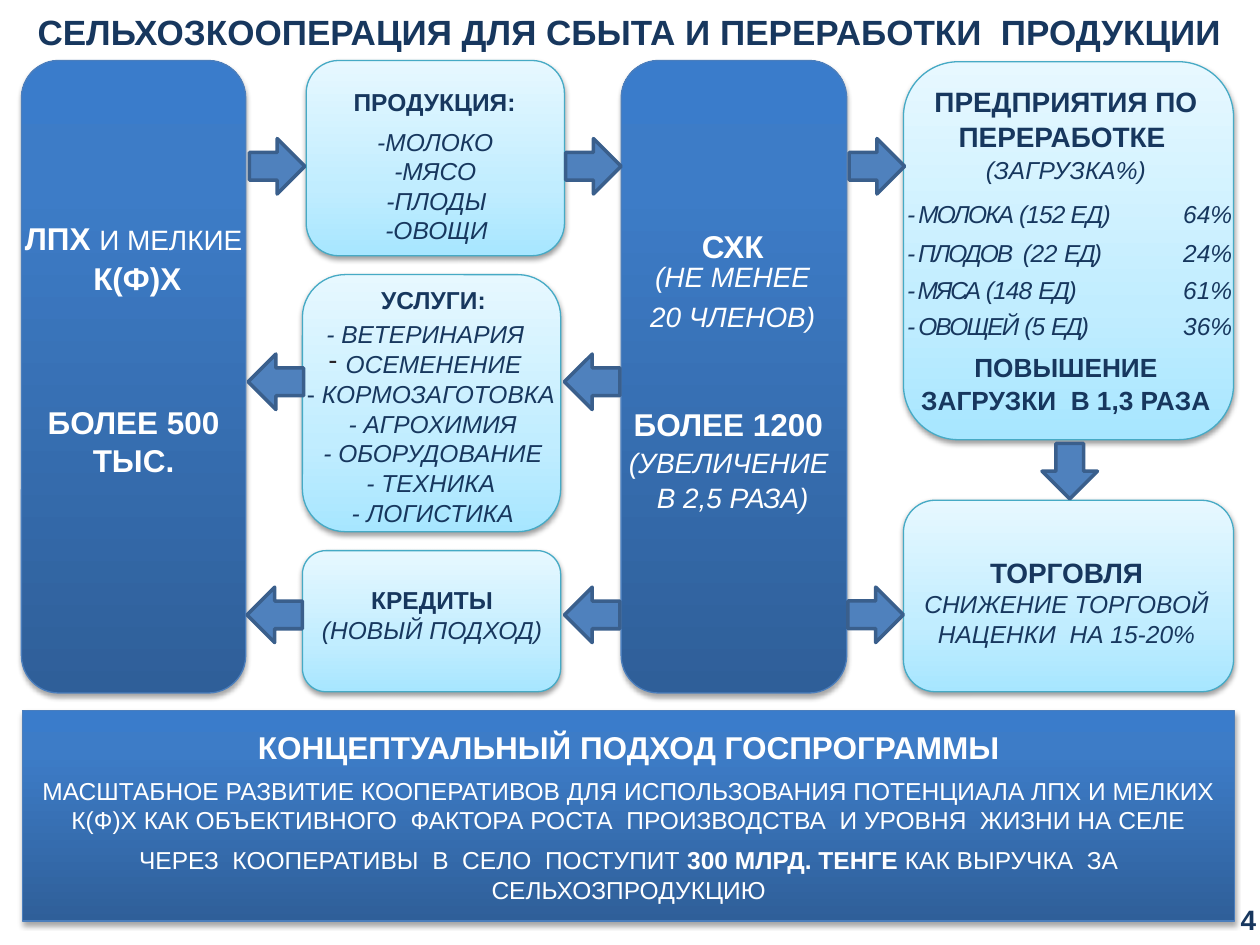
from copy import deepcopy

from lxml import etree
from pptx import Presentation
from pptx import util as u
from pptx.dml.color import RGBColor
from pptx.enum import shapes, text
from pptx.oxml.ns import qn

NAVY = RGBColor(0x17, 0x37, 0x5E)
WHITE = RGBColor(0xFF, 0xFF, 0xFF)
ARROW_FILL = RGBColor(0x4F, 0x81, 0xBD)
ARROW_LINE = RGBColor(0x3A, 0x5F, 0x8C)
BLUE_LINE = RGBColor(0x4B, 0x7E, 0xBC)
ICE_LINE = RGBColor(0x46, 0xAA, 0xC5)
BLUE_STOPS = [(0, RGBColor(0x2F, 0x5F, 0x99)), (0.8, RGBColor(0x3D, 0x7C, 0xC7)),
              (1, RGBColor(0x3A, 0x7C, 0xCB))]
ICE_STOPS = [(0, RGBColor(0xA7, 0xE6, 0xFF)), (0.35, RGBColor(0xC1, 0xED, 0xFF)),
             (1, RGBColor(0xE7, 0xF8, 0xFF))]
BLUE = (BLUE_STOPS, BLUE_LINE, 35, 1.8)
ICE = (ICE_STOPS, ICE_LINE, 38, 1.6)
BULLET_COLOR = "2A2428"
NO_GRID_STYLE = "{2D5ABB26-0587-4C30-8999-92F81FD0307C}"

ROUND = shapes.MSO_SHAPE.ROUNDED_RECTANGLE
CENTER, LEFT, RIGHT = text.PP_ALIGN.CENTER, text.PP_ALIGN.LEFT, text.PP_ALIGN.RIGHT
MIDDLE = text.MSO_ANCHOR.MIDDLE


def inches(*lengths):
    return [u.Inches(length) for length in lengths]


def write(paragraph, words, size=14, color=NAVY, bold=False, italic=False, spacing=0):
    run = paragraph.add_run()
    run.text = words
    font = run.font
    font.name, font.size = "Arial", u.Pt(size)
    font.bold, font.italic = bold, italic
    font.color.rgb = color
    if spacing:
        font._element.set("spc", str(round(spacing * 100)))


def add_paragraph(frame, *runs, align=CENTER, before=0, after=0, line=None,
                  margin=0, indent=0, bullet=None):
    paragraph = frame.paragraphs[0]
    if paragraph.runs:
        paragraph = frame.add_paragraph()
    paragraph.alignment = align
    paragraph.space_before, paragraph.space_after = u.Pt(before), u.Pt(after)
    if line:
        paragraph.line_spacing = line
    properties = paragraph._p.get_or_add_pPr()
    properties.set("marL", str(u.Inches(margin)))
    properties.set("indent", str(u.Inches(indent)))
    if bullet:
        color = etree.SubElement(properties, qn("a:buClr"))
        etree.SubElement(color, qn("a:srgbClr"), val=BULLET_COLOR)
        etree.SubElement(properties, qn("a:buChar"), char=bullet)
    for words, style in runs:
        write(paragraph, words, **style)


def clear_insets(frame):
    frame.margin_left = frame.margin_right = frame.margin_top = frame.margin_bottom = 0


def add_label(slide, place, anchor=None):
    frame = slide.shapes.add_textbox(*inches(*place)).text_frame
    frame.word_wrap = True
    clear_insets(frame)
    if anchor:
        frame.vertical_anchor = anchor
    return frame


def add_panel(slide, place, look, outline=ROUND):
    stops, line_color, shadow_alpha, shadow_distance = look
    panel = slide.shapes.add_shape(outline, *inches(*place))
    panel.fill.gradient()
    panel.fill.gradient_angle = 90
    stop_list = panel._element.spPr.find(".//" + qn("a:gsLst"))
    stop_list.append(deepcopy(stop_list[-1]))
    for stop, (position, color) in zip(panel.fill.gradient_stops, stops):
        stop.position = position
        stop.color.rgb = color
    panel.line.color.rgb = line_color
    panel.line.width = u.Pt(0.75)
    panel.shadow.inherit = False
    effects = panel._element.spPr.find(qn("a:effectLst"))
    shadow = etree.SubElement(effects, qn("a:outerShdw"), blurRad=str(u.Pt(3.1)),
                              dist=str(u.Pt(shadow_distance)), dir="5400000",
                              rotWithShape="0")
    color = etree.SubElement(shadow, qn("a:srgbClr"), val="000000")
    etree.SubElement(color, qn("a:alpha"), val=str(shadow_alpha * 1000))
    return panel


def add_arrow(slide, left, top, rotation):
    arrow = slide.shapes.add_shape(shapes.MSO_SHAPE.RIGHT_ARROW,
                                   *inches(left, top, 0.44, 0.44))
    arrow.rotation = rotation
    arrow.fill.solid()
    arrow.fill.fore_color.rgb = ARROW_FILL
    arrow.line.color.rgb = ARROW_LINE
    arrow.line.width = u.Pt(2)
    arrow.shadow.inherit = False


def add_load_table(slide, rows):
    frame = slide.shapes.add_table(len(rows), 2, *inches(7.17, 1.64, 2.62, 1.1))
    table = frame.table
    table.first_row = table.horz_banding = False
    table._tbl.tblPr.find(qn("a:tableStyleId")).text = NO_GRID_STYLE
    for column, width in zip(table.columns, inches(1.83, 0.78)):
        column.width = width
    for row, height in zip(table.rows, inches(0.24, 0.29, 0.29, 0.28)):
        row.height = height
    for index, (product, share) in enumerate(rows):
        spacing = dict(before=2) if index else dict(line=u.Pt(12.7))
        product_runs = [(words, dict(italic=True, spacing=gap)) for words, gap in product]
        share_runs = [(share, dict(italic=True))]
        for column, (runs, align) in enumerate([(product_runs, LEFT), (share_runs, RIGHT)]):
            cell = table.cell(index, column)
            cell.fill.background()
            clear_insets(cell)
            cell.margin_top = u.Inches(0.03 if index else 0)
            add_paragraph(cell.text_frame, *runs, align=align,
                          margin=0.03 if align == LEFT else 0, **spacing)


def add_concept(slide):
    bar = add_panel(slide, (0.18, 5.64, 9.62, 1.67), BLUE, shapes.MSO_SHAPE.RECTANGLE)
    frame = bar.text_frame
    frame.word_wrap = True
    frame.vertical_anchor = MIDDLE
    plain, strong = dict(color=WHITE), dict(color=WHITE, bold=True)
    add_paragraph(frame, ("КОНЦЕПТУАЛЬНЫЙ ПОДХОД ГОСПРОГРАММЫ", dict(strong, size=18)), after=6)
    add_paragraph(frame, ("МАСШТАБНОЕ РАЗВИТИЕ КООПЕРАТИВОВ ДЛЯ ИСПОЛЬЗОВАНИЯ ПОТЕНЦИАЛА ЛПХ "
                          "И МЕЛКИХ К(Ф)Х КАК ОБЪЕКТИВНОГО  ФАКТОРА РОСТА  ПРОИЗВОДСТВА  "
                          "И УРОВНЯ  ЖИЗНИ НА СЕЛЕ", plain), after=6)
    add_paragraph(frame, ("ЧЕРЕЗ  КООПЕРАТИВЫ  В  СЕЛО  ПОСТУПИТ ", plain),
                  ("300 МЛРД. ТЕНГЕ", strong), (" КАК ВЫРУЧКА  ЗА СЕЛЬХОЗПРОДУКЦИЮ", plain))


def add_pillar_texts(slide):
    strong = dict(size=18, color=WHITE, bold=True)
    plain = dict(size=16, color=WHITE)
    slanted = dict(plain, italic=True)
    farms = add_label(slide, (0.17, 1.74, 1.78, 0.62))
    add_paragraph(farms, ("ЛПХ ", strong), ("И МЕЛКИЕ", plain))
    add_paragraph(farms, ("К(Ф)Х", strong), before=0.9, margin=0.06)
    add_paragraph(add_label(slide, (0.17, 3.2, 1.78, 0.61)), ("БОЛЕЕ 500 ТЫС.", strong))
    cooperatives = add_label(slide, (4.92, 1.73, 1.79, 0.96))
    add_paragraph(cooperatives, ("СХК", strong), line=u.Pt(26.6))
    add_paragraph(cooperatives, ("(НЕ МЕНЕЕ", slanted), line=u.Pt(16.4))
    add_paragraph(cooperatives, ("20 ЧЛЕНОВ)", slanted), before=3.6)
    add_paragraph(add_label(slide, (4.92, 3.2, 1.79, 0.89)), ("БОЛЕЕ 1200  ", strong),
                  ("(УВЕЛИЧЕНИЕ  В 2,5 РАЗА)", slanted), line=1.06)


def add_exchange_texts(slide):
    strong, slanted = dict(bold=True), dict(italic=True)
    produce = add_label(slide, (2.42, 0.69, 2.06, 1.26))
    add_paragraph(produce, ("ПРОДУКЦИЯ:", strong), after=6)
    for item, margin in [("-МОЛОКО", 0.01), ("-МЯСО", 0.01), ("-ПЛОДЫ", 0.03), ("-ОВОЩИ", 0.03)]:
        add_paragraph(produce, (item, slanted), margin=margin)
    services = add_label(slide, (2.4, 2.26, 2.04, 1.93))
    add_paragraph(services, ("УСЛУГИ:", strong), line=u.Pt(16.8), after=6, margin=0.04)
    add_paragraph(services, ("- ВЕТЕРИНАРИЯ", slanted), align=LEFT, line=u.Pt(13.8), margin=0.19)
    add_paragraph(services, (" ОСЕМЕНЕНИЕ", slanted), align=LEFT, margin=0.29,
                  indent=-0.08, bullet="-")
    add_paragraph(services, ("- ", {}), ("КОРМОЗАГОТОВКА", slanted), before=0.3)
    for item, margin in [("- АГРОХИМИЯ", 0.03), ("- ОБОРУДОВАНИЕ", 0.03),
                         ("- ТЕХНИКА", 0), ("- ЛОГИСТИКА", 0.03)]:
        add_paragraph(services, (item, slanted), before=0.2, margin=margin)
    credit = add_label(slide, (2.4, 4.64, 2.06, 0.49))
    add_paragraph(credit, ("КРЕДИТЫ", strong))
    add_paragraph(credit, ("(НОВЫЙ ПОДХОД)", slanted), before=0.8)


def add_market_texts(slide):
    strong, slanted = dict(size=16, bold=True), dict(italic=True)
    add_paragraph(add_label(slide, (7.26, 0.66, 2.4, 0.81)),
                  ("ПРЕДПРИЯТИЯ ПО ПЕРЕРАБОТКЕ  ", strong), ("(ЗАГРУЗКА%)", slanted), line=1.05)
    add_load_table(slide, [
        ([("- МОЛОКА ", -1.1), ("(152 ЕД)", -0.5)], "64%"),
        ([("- ПЛОДОВ  ", -1.2), ("(22 ", -0.2), ("ЕД)", -1.1)], "24%"),
        ([("- МЯСА ", -1.3), ("(148 ", -0.5), ("ЕД)", -1)], "61%"),
        ([("- ОВОЩЕЙ ", -1.1), ("(5 ", -0.5), ("ЕД)", -1.1)], "36%")])
    add_paragraph(add_label(slide, (7.26, 2.77, 2.4, 0.54)),
                  ("ПОВЫШЕНИЕ ЗАГРУЗКИ  В 1,3 РАЗА", dict(size=15, bold=True)), line=1.06)
    trade = add_label(slide, (7.17, 4.41, 2.59, 0.74))
    add_paragraph(trade, ("ТОРГОВЛЯ", strong))
    add_paragraph(trade, ("СНИЖЕНИЕ ТОРГОВОЙ НАЦЕНКИ  НА 15-20%", slanted))


def main():
    deck = Presentation()
    deck.slide_width, deck.slide_height = inches(10, 7.5)
    slide = deck.slides.add_slide(deck.slide_layouts[6])
    add_concept(slide)
    for place in [(7.17, 3.97, 2.62, 1.52), (7.17, 0.49, 2.62, 3), (2.4, 4.37, 2.05, 1.12),
                  (2.4, 2.18, 2.05, 2.04), (2.43, 0.48, 2.05, 1.55)]:
        add_panel(slide, place, ICE)
    for left, width in [(4.93, 1.79), (0.17, 1.78)]:
        add_panel(slide, (left, 0.48, width, 5.02), BLUE)
    add_paragraph(add_label(slide, (0, 0.08, 9.99, 0.34)),
                  ("СЕЛЬХОЗКООПЕРАЦИЯ ДЛЯ СБЫТА И ПЕРЕРАБОТКИ  ПРОДУКЦИИ",
                   dict(size=20, bold=True)))
    add_exchange_texts(slide)
    add_market_texts(slide)
    add_pillar_texts(slide)
    add_paragraph(add_label(slide, (7.64, 7.1, 2.33, 0.4), MIDDLE),
                  ("4", dict(size=16, bold=True)), align=RIGHT, before=4.5)
    for left, top, rotation in [(1.98, 1.1, 0), (4.49, 1.1, 0), (6.74, 1.1, 0), (6.73, 4.66, 0),
                                (8.27, 3.52, 90), (1.97, 2.81, 180), (4.48, 2.81, 180),
                                (1.96, 4.66, 180), (4.48, 4.66, 180)]:
        add_arrow(slide, left, top, rotation)
    deck.save("out.pptx")


if __name__ == "__main__":
    main()
